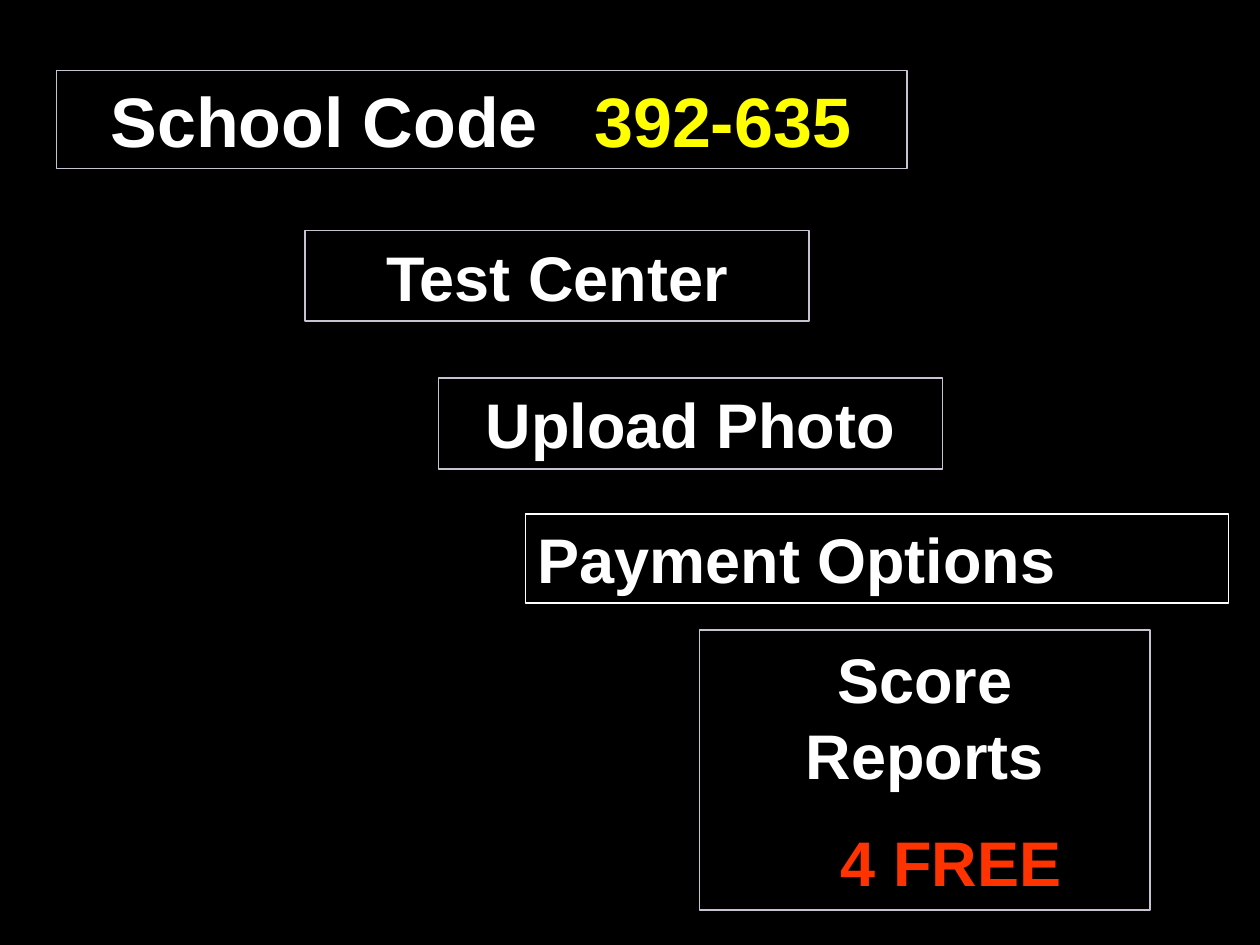
from pptx import Presentation
from pptx.dml.color import RGBColor as Rgb
from pptx.enum.shapes import MSO_SHAPE as Shape
from pptx.enum.text import MSO_ANCHOR as Anchor, PP_ALIGN as Align
from pptx.oxml.ns import qn
from pptx.util import Cm, Pt
from lxml import etree

THEME = {
    "font": "Arial", "title": 40, "body": 36,
    "page": "000000", "text": "FFFFFF", "code": "FFFF00", "free": "FF3300",
    "border": "C9C2D1",
}

# Boxes: position and size in cm; each paragraph is a list of (text, colour)
BOXES = [
    {"at": (1.14, 1.42, 17.15, 1.98), "size": "title", "align": Align.LEFT,
     "inset": 1.09, "tab": 9.75,
     "paras": [[("School Code\t", "text"), ("392-635", "code")]]},
    {"at": (8.84, 7.62, 10.16, 1.83), "paras": [[("Upload Photo", "text")]]},
    {"at": (14.1, 12.7, 9.09, 5.64), "last_indent": 1.06,
     "paras": [[("Score Reports", "text")], [("4 FREE", "free")]]},
    {"at": (6.15, 4.65, 10.16, 1.83), "paras": [[("Test Center", "text")]]},
    {"at": (10.59, 10.36, 14.17, 1.8), "align": Align.LEFT,
     "border": "text", "line": 0.75,
     "paras": [[("Payment Options", "text")]]},
]


def color(name):
    return Rgb.from_string(THEME[name])


def add_tab_stop(para, position):
    tabs = etree.SubElement(para._p.get_or_add_pPr(), qn("a:tabLst"))
    etree.SubElement(tabs, qn("a:tab"), pos=str(Cm(position)), algn="l")


def add_box(page, item):
    box = page.shapes.add_shape(Shape.RECTANGLE, *map(Cm, item["at"]))
    box.shadow.inherit = False
    box.fill.background()
    box.line.color.rgb = color(item.get("border", "border"))
    box.line.width = Pt(item.get("line", 1))
    frame = box.text_frame
    frame.word_wrap = True
    frame.vertical_anchor = Anchor.MIDDLE
    frame.margin_left = Cm(item.get("inset", 0.25))
    size = THEME[item.get("size", "body")]

    for index, spans in enumerate(item["paras"]):
        para = frame.add_paragraph() if index else frame.paragraphs[0]
        para.alignment = item.get("align", Align.CENTER)
        if index:
            para.space_before = Pt(size / 2)
            para._p.get_or_add_pPr().set("marL", str(Cm(item["last_indent"])))
        if "tab" in item:
            add_tab_stop(para, item["tab"])
        para.font.name = THEME["font"]
        para.font.size = Pt(size)
        para.font.bold = True
        for text, tint in spans:
            span = para.add_run()
            span.text = text
            span.font.color.rgb = color(tint)


# Page
deck = Presentation()
deck.slide_width, deck.slide_height = Cm(25.4), Cm(19.05)
page = deck.slides.add_slide(deck.slide_layouts[6])
page.background.fill.solid()
page.background.fill.fore_color.rgb = color("page")

# Steps
for item in BOXES:
    add_box(page, item)

deck.save("out.pptx")
